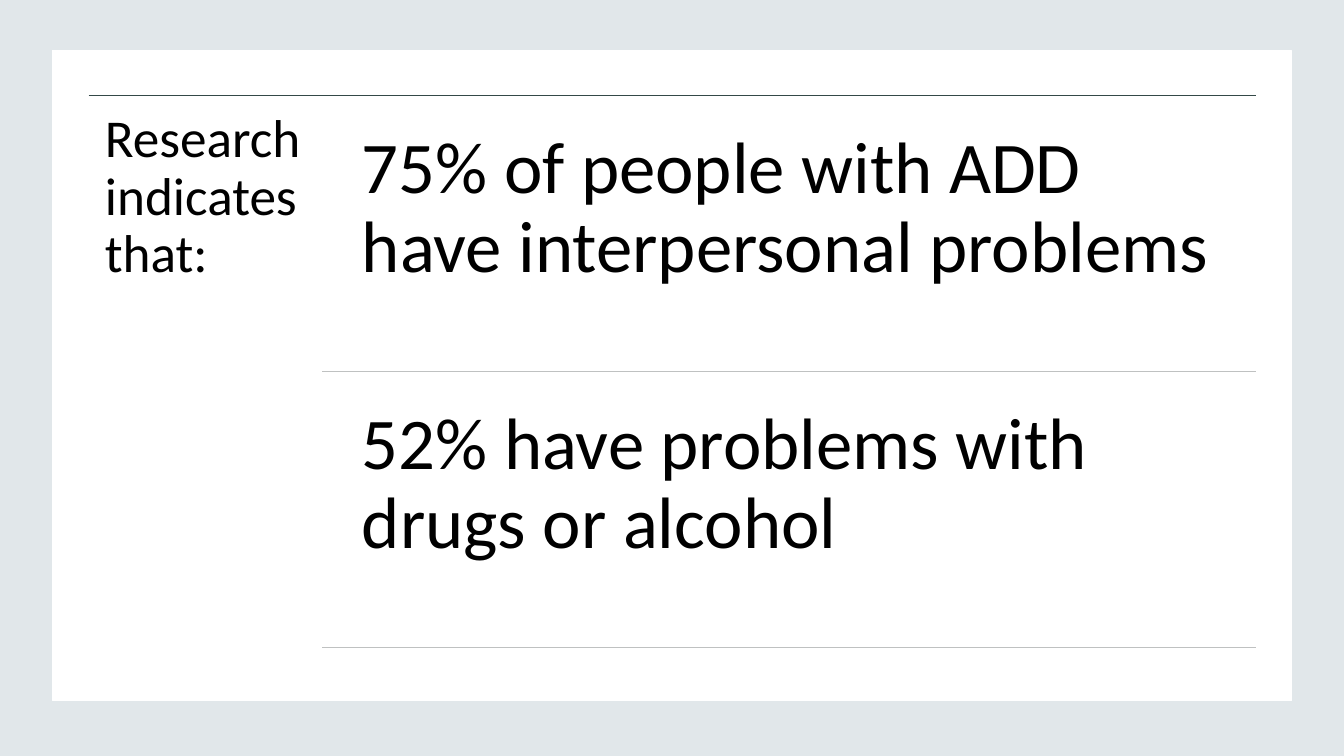
from lxml.etree import SubElement
from pptx import Presentation
from pptx.dml.color import RGBColor as Rgb
from pptx.enum.shapes import MSO_CONNECTOR as Connector, MSO_SHAPE as Preset
from pptx.enum.text import MSO_ANCHOR as Anchor, PP_ALIGN as Align
from pptx.oxml.ns import qn
from pptx.util import Inches, Pt

COLORS = {"backdrop": "E1E7EA", "card": "FFFFFF", "text": "000000",
          "top_rule": "344947", "item_rule": "BFC1C1"}
FINDINGS = ["75% of people with ADD have interpersonal problems",
            "52% have problems with drugs or alcohol"]
LABEL_COLS, TEXT_COL, COLS = 40, 43, 200
GAP_ROWS, ITEM_ROWS = 1, 20
PITCH = GAP_ROWS + ITEM_ROWS
ROWS = PITCH * len(FINDINGS) + GAP_ROWS


class FindingsSlide:
    """Draws cards, rules and text on a grid of columns and rows."""

    font = "Calibri"
    rule_width = Pt(0.85)
    left, top = Inches(0.88), Inches(0.95)
    col, row = Inches(11.58) / COLS, Inches(5.6) / ROWS

    def __init__(self, deck):
        self.width, self.height = deck.slide_width, deck.slide_height
        self.shapes = deck.slides.add_slide(deck.slide_layouts[6]).shapes

    def x(self, cols):
        return round(self.left + cols * self.col)

    def y(self, rows):
        return round(self.top + rows * self.row)

    def panel(self, color, x, y, w, h, outlined=False):
        panel = self.shapes.add_shape(
            Preset.RECTANGLE, round(x * self.width), round(y * self.height),
            round(w * self.width), round(h * self.height))
        panel.shadow.inherit = False
        panel.fill.solid()
        panel.fill.fore_color.rgb = Rgb.from_string(COLORS[color])
        if outlined:
            panel.line.color.rgb = Rgb.from_string(COLORS[color])
            panel.line.width = self.rule_width
        else:
            panel.line.fill.background()

    def rule(self, color, col, row):
        y = self.y(row)
        rule = self.shapes.add_connector(
            Connector.STRAIGHT, self.x(col), y, self.x(COLS), y)
        rule.line.color.rgb = Rgb.from_string(COLORS[color])
        rule.line.width = self.rule_width
        SubElement(rule._element.spPr, qn("a:effectLst"))

    def text(self, words, col, row, cols, rows, size, inset):
        box = self.shapes.add_textbox(self.x(col), self.y(row),
                                      round(cols * self.col), round(rows * self.row))
        frame = box.text_frame
        frame.word_wrap = True
        frame.vertical_anchor = Anchor.TOP
        frame.margin_left = frame.margin_right = Inches(inset)
        frame.margin_top = frame.margin_bottom = Inches(inset)
        paragraph = frame.paragraphs[0]
        paragraph.text = words
        paragraph.alignment = Align.LEFT
        paragraph.line_spacing = 0.9
        paragraph.font.name = self.font
        paragraph.font.size = Pt(size)
        paragraph.font.color.rgb = Rgb.from_string(COLORS["text"])


def main():
    deck = Presentation()
    deck.slide_width, deck.slide_height = Inches(13.33), Inches(7.5)
    slide = FindingsSlide(deck)
    slide.panel("backdrop", 0, 0, 1, 1)
    slide.panel("card", 0.039, 0.067, 0.922, 0.86, outlined=True)
    slide.rule("top_rule", 0, 0)
    slide.text("Research indicates that:", 0, 0, LABEL_COLS, ROWS, 38, 0.16)
    for index, finding in enumerate(FINDINGS):
        start = GAP_ROWS + index * PITCH
        slide.text(finding, TEXT_COL, start, COLS - TEXT_COL, ITEM_ROWS, 52, 0.22)
        slide.rule("item_rule", LABEL_COLS, start + ITEM_ROWS)
    deck.save("out.pptx")


if __name__ == "__main__":
    main()
